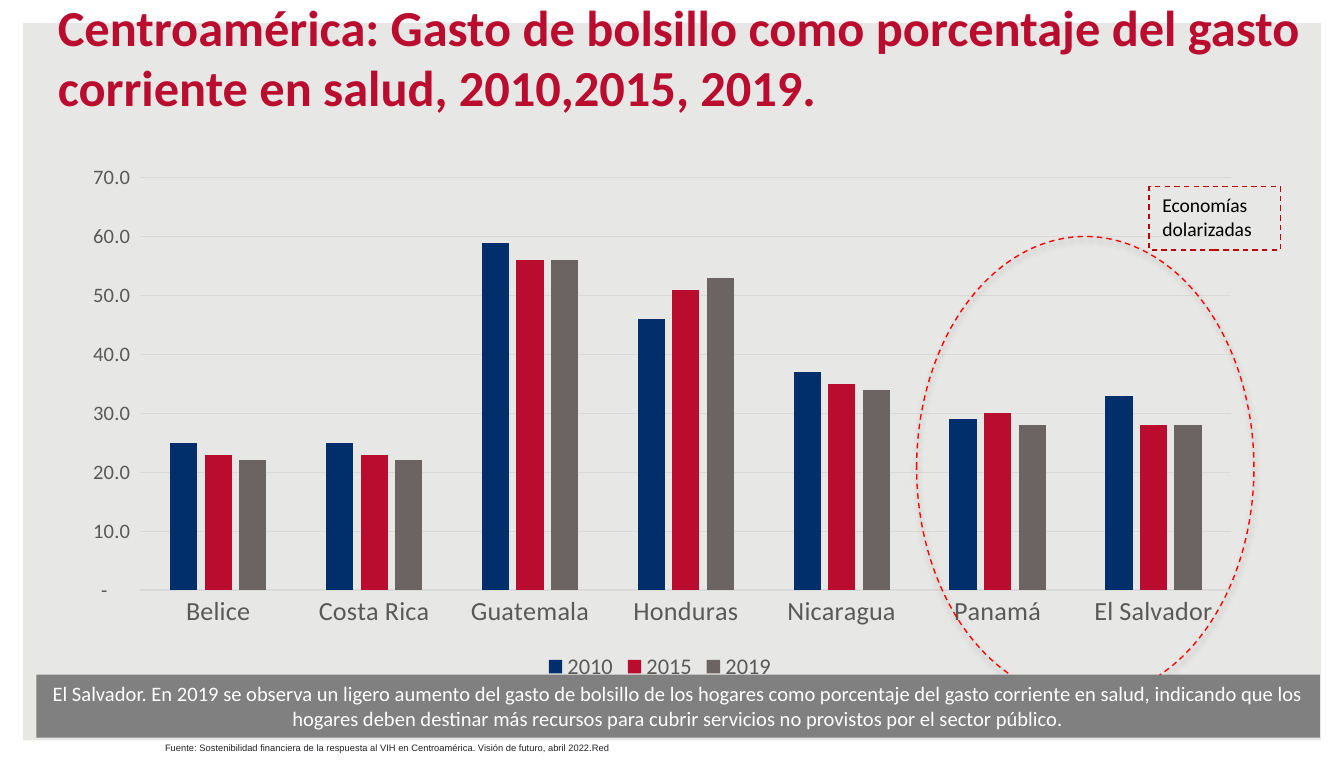
from lxml import etree
from pptx import Presentation
from pptx.chart.data import CategoryChartData
from pptx.dml.color import RGBColor
from pptx.enum.chart import XL_CHART_TYPE as Chart, XL_LEGEND_POSITION as Legend, XL_TICK_MARK as Tick
from pptx.enum.dml import MSO_LINE as Dash
from pptx.enum.shapes import MSO_SHAPE as Shape
from pptx.enum.text import MSO_ANCHOR as Anchor, MSO_AUTO_SIZE as Fit, PP_ALIGN as Align
from pptx.util import Inches, Pt

HEX = {
    "back": "E7E7E5", "white": "FFFFFF", "black": "000000", "navy": "002F6C",
    "red": "BA0C2F", "brown": "6C6463", "label": "595959", "grid": "D9D9D9",
    "ring": "FF0000", "edge": "C00000", "band": "808080", "note": "202124",
}
RGB = {name: RGBColor.from_string(code) for name, code in HEX.items()}


def put_text(shape, text, size, color, font="Calibri", bold=False,
             align=Align.LEFT, anchor=Anchor.TOP, fit=Fit.SHAPE_TO_FIT_TEXT):
    frame = shape.text_frame
    frame.text = text
    frame.word_wrap = True
    frame.auto_size = fit
    frame.vertical_anchor = anchor
    para = frame.paragraphs[0]
    para.alignment = align
    style(para.runs[0].font, size, color, font, bold)


def style(font, size, color, name="Calibri", bold=False):
    font.name, font.size, font.bold = name, Pt(size), bold
    font.color.rgb = RGB[color]


prs = Presentation()
prs.slide_width, prs.slide_height = Inches(10), Inches(5.67)
slide = prs.slides.add_slide(prs.slide_layouts[5])
slide.background.fill.solid()
slide.background.fill.fore_color.rgb = RGB["back"]
shapes = slide.shapes

# White border, behind the title
title = shapes.title
border = shapes.add_shape(Shape.FRAME, 0, 0, Inches(10), Inches(5.68))
border.adjustments[0] = 0.03
border.fill.solid()
border.fill.fore_color.rgb = RGB["white"]
border.line.fill.background()
border.shadow.inherit = False
title._element.addprevious(border._element)

title.left, title.top = Inches(0.33), Inches(0.17)
title.width, title.height = Inches(9.55), Inches(0.75)
put_text(title, "Centroamérica: Gasto de bolsillo como porcentaje del gasto "
         "corriente en salud, 2010,2015, 2019.", 27, "red", bold=True,
         anchor=Anchor.BOTTOM, fit=Fit.NONE)

# Chart
data = CategoryChartData(number_format="0")
data.categories = ["Belice", "Costa Rica", "Guatemala", "Honduras",
                   "Nicaragua", "Panamá", "El Salvador"]
series = [
    ("2010", "navy", [25, 25, 59, 46, 37, 29, 33]),
    ("2015", "red", [23, 23, 56, 51, 35, 30, 28]),
    ("2019", "brown", [22, 22, 56, 53, 34, 28, 28]),
]
for year, _, vals in series:
    data.add_series(year, vals)
chart = shapes.add_chart(Chart.COLUMN_CLUSTERED, Inches(0.48), Inches(1.15),
                         Inches(8.86), Inches(3.95), data).chart
style(chart.font, 16, "black")
chart.has_title = False
chart.has_legend = True
chart.legend.position = Legend.BOTTOM
chart.legend.include_in_layout = False
style(chart.legend.font, 12, "label")

plot = chart.plots[0]
plot.gap_width, plot.overlap, plot.vary_by_categories = 219, -27, False
for bars, (_, color, _) in zip(plot.series, series):
    bars.format.fill.solid()
    bars.format.fill.fore_color.rgb = RGB[color]
    bars.invert_if_negative = False

cats, scale = chart.category_axis, chart.value_axis
for axis, size in ((cats, 14), (scale, 11)):
    axis.major_tick_mark = axis.minor_tick_mark = Tick.NONE
    style(axis.tick_labels.font, size, "label")
scale.minimum_scale, scale.maximum_scale, scale.major_unit = 0, 70, 10
scale.has_major_gridlines = True
for line in (cats.format.line, scale.major_gridlines.format.line):
    line.color.rgb = RGB["grid"]
    line.width = Pt(0.75)
scale.format.line.fill.background()
scale.tick_labels.number_format = r'_(* #,##0.0_);_(* \(#,##0.0\);_(* "-"??_);_(@_)'
scale.tick_labels.number_format_is_linked = False

# Ring, its label and the message band
boxes = []
for kind, left, top, width, height, fill, edge in (
    (Shape.OVAL, 6.82, 1.76, 2.51, 3.44, None, "ring"),
    (Shape.RECTANGLE, 8.55, 1.39, 0.98, 0.47, None, "edge"),
    (Shape.RECTANGLE, 0.27, 5.02, 9.55, 0.47, "band", None),
):
    box = shapes.add_shape(kind, Inches(left), Inches(top), Inches(width), Inches(height))
    box.shadow.inherit = False
    if fill:
        box.fill.solid()
        box.fill.fore_color.rgb = RGB[fill]
    else:
        box.fill.background()
    if edge:
        box.line.color.rgb = RGB[edge]
        box.line.width = Pt(0.75)
        box.line.dash_style = Dash.DASH
    else:
        box.line.fill.background()
    boxes.append(box)
ring, label, band = boxes

NS = "http://schemas.openxmlformats.org/drawingml/2006/main"
effects = ring._element.spPr.find(f"{{{NS}}}effectLst")
shade = etree.SubElement(effects, f"{{{NS}}}outerShdw", blurRad=str(Pt(3.1)),
                         dist=str(Pt(1.8)), dir="5400000", rotWithShape="0")
tint = etree.SubElement(shade, f"{{{NS}}}srgbClr", val=HEX["black"])
etree.SubElement(tint, f"{{{NS}}}alpha", val="35000")

put_text(label, "Economías dolarizadas", 10.5, "black")
put_text(band, "El Salvador. En 2019 se observa un ligero aumento del gasto de bolsillo "
         "de los hogares como porcentaje del gasto corriente en salud, indicando que los "
         "hogares deben destinar más recursos para cubrir servicios no provistos por el "
         "sector público.", 11, "white", align=Align.CENTER)

source = shapes.add_textbox(Inches(1.13), Inches(5.47), Inches(8.54), Inches(0.19))
put_text(source, "Fuente: Sostenibilidad financiera de la respuesta al VIH en Centroamérica. "
         "Visión de futuro, abril 2022.Red", 5, "note", font="Arial")

prs.save("out.pptx")
